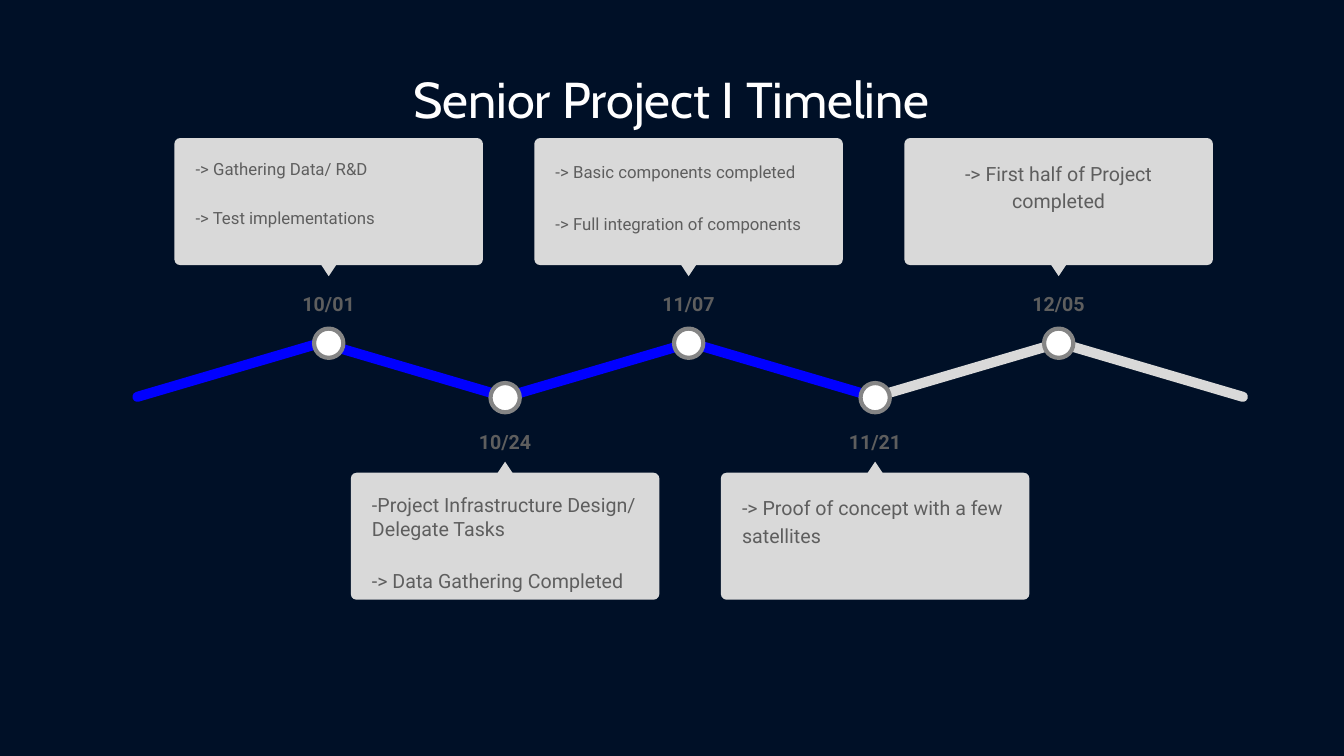
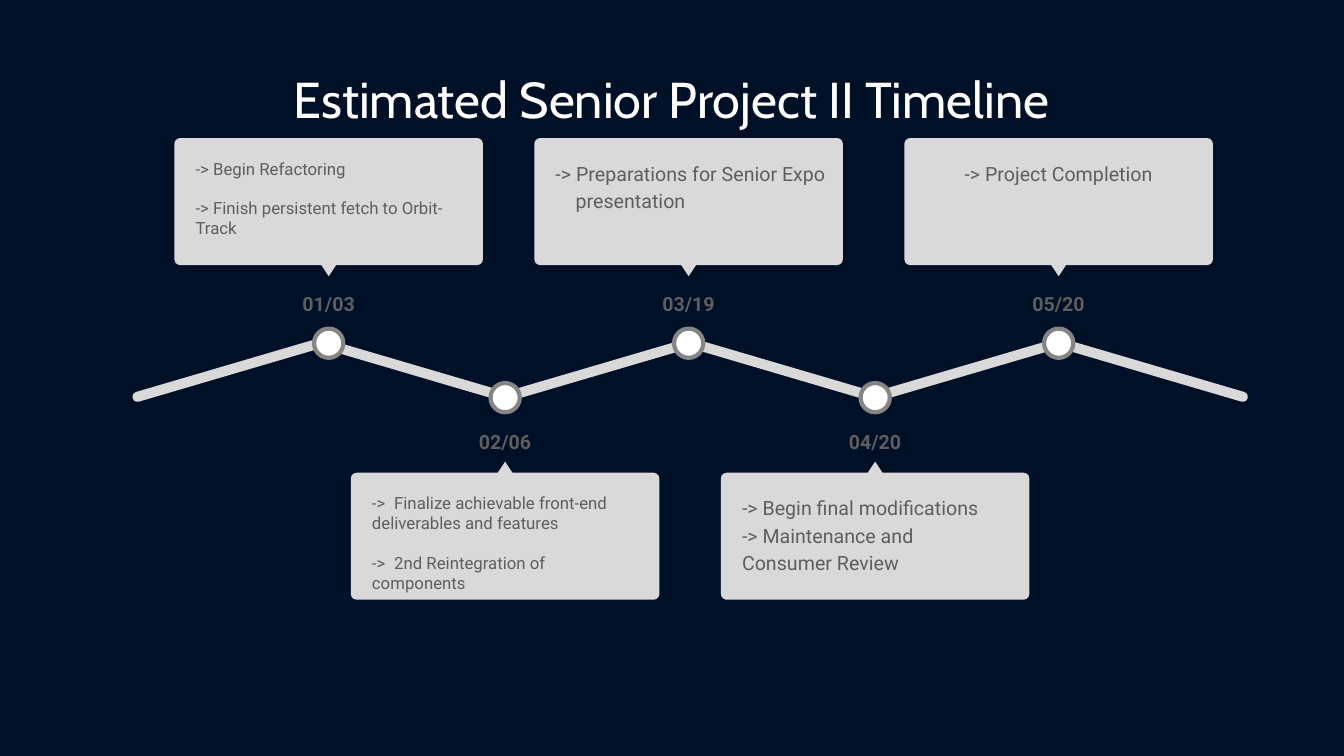
"""Build two project timeline slides."""
import dataclasses

import lxml.etree
import pptx
import pptx.dml.color
import pptx.enum.shapes
import pptx.enum.text
import pptx.oxml.ns
import pptx.util

Inches, Pt = pptx.util.Inches, pptx.util.Pt
Kind = pptx.enum.shapes.MSO_SHAPE
Align = pptx.enum.text.PP_ALIGN
Anchor = pptx.enum.text.MSO_ANCHOR
qn = pptx.oxml.ns.qn


@dataclasses.dataclass(frozen=True)
class Theme:
    back: str = "001027"
    card: str = "D9D9D9"
    done: str = "0000FF"
    ring: str = "858585"
    ink: str = "5E5E5E"
    white: str = "FFFFFF"
    head: str = "Cabin"
    body: str = "Roboto"
    title: int = 36
    large: int = 14
    small: int = 12


@dataclasses.dataclass(frozen=True)
class Note:
    date: str
    lines: tuple
    size: int = Theme.large
    space: float = 1.15
    gap: int = 0
    align: Align = Align.LEFT
    width: float = 2.9
    hang: float = 0
    tab: float = 0


SLIDES = [
    ("Senior Project I Timeline", 4, [
        Note("10/01", ("-> Gathering Data/ R&D", "-> Test implementations"),
             size=Theme.small, space=1, gap=21),
        Note("10/24", ("-Project Infrastructure Design/ Delegate Tasks",
                       "-> Data Gathering Completed"), space=1, gap=21),
        Note("11/07", ("-> Basic components completed",
                       "-> Full integration of components"),
             size=Theme.small, gap=21, width=3.06),
        Note("11/21", ("-> Proof of concept with a few satellites",)),
        Note("12/05", ("-> First half of Project completed",),
             align=Align.CENTER),
    ]),
    ("Estimated Senior Project II Timeline", 0, [
        Note("01/03", ("-> Begin Refactoring",
                       "-> Finish persistent fetch to Orbit-Track"),
             size=Theme.small, space=1, gap=14),
        Note("02/06", ("->\tFinalize achievable front-end deliverables and features",
                       "->\t2nd Reintegration of components"),
             size=Theme.small, space=1, gap=14, tab=0.22),
        Note("03/19", ("-> Preparations for Senior Expo presentation",),
             width=3.06, hang=0.2),
        Note("04/20", ("-> Begin final modifications",
                       "-> Maintenance and Consumer Review")),
        Note("05/20", ("-> Project Completion",), align=Align.CENTER),
    ]),
]

STOPS = (3.26, 5.01, 6.83, 8.68, 10.5)
HIGH = dict(dot=3.405, date=2.73, card=1.37, tip=2.62, turn=180)
LOW = dict(dot=3.945, date=4.1, card=4.69, tip=4.58, turn=0)
BARS, BAR_MID, BAR_STEP, BAR_TOP = 6, 2.27, 1.83, 3.62
BAR_W, BAR_H, SLOPE = 1.99, 0.1, 16.4
CARD_W, CARD_H, INSET = 3.06, 1.26, 0.08


def color(code):
    return pptx.dml.color.RGBColor.from_string(code)


def box(left, top, width, height):
    return [Inches(v) for v in (left, top, width, height)]


def draw(shapes, kind, place, fill, round_by=None, turn=0):
    shape = shapes.add_shape(kind, *box(*place))
    shape.shadow.inherit = False
    shape.fill.solid()
    shape.fill.fore_color.rgb = color(fill)
    shape.line.fill.background()
    shape.rotation = turn
    if round_by is not None:
        shape.adjustments[0] = round_by
    return shape


def style(run, face, size, code, bold=False):
    run.font.name = face
    run.font.size = Pt(size)
    run.font.bold = bold
    run.font.color.rgb = color(code)


def write(shapes, place, lines, note, bold=False):
    frame = shapes.add_textbox(*box(*place)).text_frame
    frame.word_wrap = True
    frame.margin_left = frame.margin_right = Inches(0.13)
    frame.margin_top = frame.margin_bottom = Inches(0.13)
    for i, line in enumerate(lines):
        para = frame.add_paragraph() if i else frame.paragraphs[0]
        props = para._p.get_or_add_pPr()
        if note.hang:
            props.set("marL", str(Inches(note.hang)))
            props.set("indent", str(-Inches(note.hang)))
        if note.tab:
            tabs = lxml.etree.SubElement(props, qn("a:tabLst"))
            lxml.etree.SubElement(tabs, qn("a:tab"),
                                  pos=str(Inches(note.tab)), algn="l")
        para.alignment = note.align
        para.line_spacing = note.space
        if i and note.gap:
            para.space_before = Pt(note.gap)
        run = para.add_run()
        run.text = line
        style(run, Theme.body, note.size, Theme.ink, bold)


def add_title(slide, text):
    title = slide.shapes.title
    title.left, title.top, title.width, title.height = box(1.66, 0, 10, 1.33)
    frame = title.text_frame
    frame.auto_size = pptx.enum.text.MSO_AUTO_SIZE.NONE
    frame.vertical_anchor = Anchor.BOTTOM
    para = frame.paragraphs[0]
    para.alignment = Align.CENTER
    para.line_spacing = 0.9
    run = para.add_run()
    run.text = text
    style(run, Theme.head, Theme.title, Theme.white)


def add_bars(slide, done):
    for i in reversed(range(BARS)):
        left = BAR_MID + i * BAR_STEP - BAR_W / 2
        draw(slide.shapes, Kind.ROUNDED_RECTANGLE,
             (left, BAR_TOP, BAR_W, BAR_H),
             Theme.done if i < done else Theme.card, 0.5,
             SLOPE if i % 2 else -SLOPE)


def add_stop(slide, mid, row, note):
    shapes = slide.shapes.add_group_shape().shapes
    dot = draw(shapes, Kind.OVAL,
               (mid - 0.145, row["dot"] - 0.145, 0.29, 0.29), Theme.white)
    dot.line.color.rgb = color(Theme.ring)
    dot.line.width = Pt(3)
    write(shapes, (mid - 0.62, row["date"], 1.24, 0.49), [note.date],
          Note(note.date, (), align=Align.CENTER), bold=True)
    left = mid - CARD_W / 2
    draw(shapes, Kind.ROUNDED_RECTANGLE,
         (left, row["card"], CARD_W, CARD_H), Theme.card, 0.045)
    draw(shapes, Kind.ISOSCELES_TRIANGLE,
         (mid - 0.08, row["tip"], 0.16, 0.12), Theme.card, turn=row["turn"])
    write(shapes, (left + INSET, row["card"] + 0.07, note.width, 1.11),
          note.lines, note)


def main():
    deck = pptx.Presentation()
    deck.slide_width, deck.slide_height = Inches(13.33), Inches(7.5)
    fill = deck.slide_master.background.fill
    fill.solid()
    fill.fore_color.rgb = color(Theme.back)
    for title, done, notes in SLIDES:
        slide = deck.slides.add_slide(deck.slide_layouts[5])
        add_title(slide, title)
        add_bars(slide, done)
        for i, (mid, note) in enumerate(zip(STOPS, notes)):
            add_stop(slide, mid, LOW if i % 2 else HIGH, note)
    deck.save("out.pptx")


if __name__ == "__main__":
    main()
